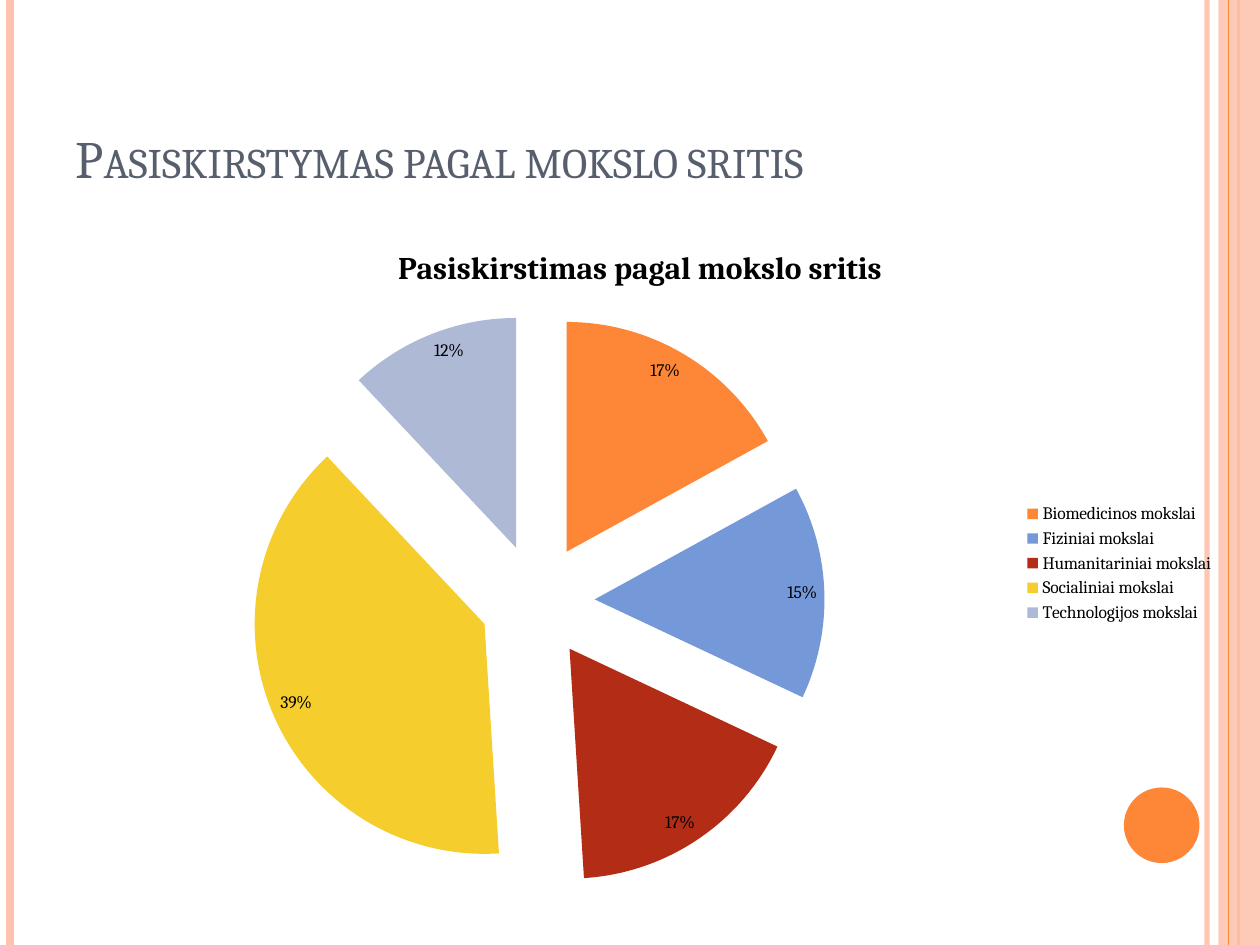
from dataclasses import dataclass

import pptx
import pptx.chart.data
import pptx.dml.color
import pptx.enum.chart
import pptx.enum.shapes
import pptx.enum.text
import pptx.oxml.ns
import pptx.oxml.xmlchemy
import pptx.util
from pptx.util import Inches


@dataclass(frozen=True)
class Theme:
    """Colours, font and type sizes of the deck."""

    font: str = "Cambria"
    heading: str = "575F6D"
    text: str = "000000"
    accent: str = "FE8637"
    pale: str = "FEC3AE"
    paper: str = "FFFFFF"
    slices: tuple = ("FE8637", "7598D9", "B32C16", "F5CD2D", "AEBAD5")
    title_size: int = 30
    chart_title_size: int = 18
    chart_size: int = 10


THEME = Theme()

SCIENCE_AREAS = {
    "Biomedicinos mokslai": 17,
    "Fiziniai mokslai": 15,
    "Humanitariniai mokslai": 17,
    "Socialiniai mokslai": 39,
    "Technologijos mokslai": 12,
}


def rgb(value):
    """Turn a hex string into a colour."""
    return pptx.dml.color.RGBColor.from_string(value)


def make_element(tag, **attributes):
    """Create an XML element with the given attributes."""
    element = pptx.oxml.xmlchemy.OxmlElement(tag)
    for name, value in attributes.items():
        element.set(name, str(value))
    return element


def paint(fill, color, opacity=100):
    """Make a fill solid, with opacity in percent."""
    fill.solid()
    fill.fore_color.rgb = rgb(color)
    if opacity < 100:
        node = next(fill._xPr.iter(pptx.oxml.ns.qn("a:srgbClr")))
        node.append(make_element("a:alpha", val=opacity * 1000))


def format_font(font, size, color, bold=False):
    """Set typeface, size, colour and weight of a font."""
    font.name = THEME.font
    font.size = pptx.util.Pt(size)
    font.color.rgb = rgb(color)
    font.bold = bold


def write_text(frame, text, *, size, color, bold=False, small_caps=False,
               align=pptx.enum.text.PP_ALIGN.LEFT):
    """Write one formatted paragraph into a text frame."""
    para = frame.paragraphs[0]
    para.alignment = align
    span = para.add_run()
    span.text = text
    format_font(span.font, size, color, bold)
    if small_caps:
        span._r.get_or_add_rPr().set("cap", "small")


def add_stripe(page, left, top, height, color, width, opacity=100):
    """Draw a vertical line down from a point."""
    stripe = page.shapes.add_connector(
        pptx.enum.shapes.MSO_CONNECTOR.STRAIGHT, left, top, left, top + height)
    stripe.line.width = pptx.util.Pt(width)
    paint(stripe.line.fill, color, opacity)
    stripe._element.spPr.append(make_element("a:effectLst"))


def add_block(page, kind, left, top, width, height, color, opacity=100):
    """Add a filled shape without outline."""
    block = page.shapes.add_shape(kind, left, top, width, height)
    block.shadow.inherit = False
    block.line.fill.background()
    paint(block.fill, color, opacity)


def add_frame(page, left, top, width, height):
    """Draw the edge stripes, right band and corner disc."""
    right = left + width
    shapes = pptx.enum.shapes.MSO_SHAPE
    band = Inches(0.33)
    disc = Inches(0.6)
    add_stripe(page, right - Inches(0.42), top, height, THEME.pale, 3, 93)
    add_stripe(page, left + Inches(0.08), top, height, THEME.pale, 4.5)
    add_stripe(page, right - Inches(0.17), top, height, THEME.accent, 1.5)
    add_block(page, shapes.RECTANGLE, right - band, top, band, height, THEME.pale, 87)
    add_stripe(page, right - Inches(0.25), top, height, THEME.accent, 0.75)
    add_block(page, shapes.OVAL, right - Inches(1.08), top + height - Inches(1.25),
              disc, disc, THEME.accent)


def add_title(page, text, left, top, width, height):
    """Place the heading in the title placeholder."""
    box = page.shapes.title
    box.left, box.top, box.width, box.height = left, top, width, height
    frame = box.text_frame
    frame.word_wrap = True
    frame.auto_size = pptx.enum.text.MSO_AUTO_SIZE.NONE
    frame.vertical_anchor = pptx.enum.text.MSO_ANCHOR.BOTTOM
    write_text(frame, text, size=THEME.title_size, color=THEME.heading, small_caps=True)


def add_pie(page, title, values, left, top, width, height):
    """Add the exploded pie chart with percent labels and a legend."""
    enums = pptx.enum.chart
    data = pptx.chart.data.CategoryChartData()
    data.categories = list(values)
    data.add_series("Series 1", list(values.values()))
    chart = page.shapes.add_chart(
        enums.XL_CHART_TYPE.PIE, left, top, width, height, data).chart
    format_font(chart.font, THEME.chart_size, THEME.text)

    chart.has_title = True
    write_text(chart.chart_title.text_frame, title, size=THEME.chart_title_size,
               color=THEME.text, bold=True, align=pptx.enum.text.PP_ALIGN.CENTER)
    chart.has_legend = True
    chart.legend.position = enums.XL_LEGEND_POSITION.RIGHT
    chart.legend.include_in_layout = False

    plot = chart.plots[0]
    plot.vary_by_categories = True
    plot.has_data_labels = True
    labels = plot.data_labels
    labels.show_value = False
    labels.show_percentage = True
    labels.number_format = "0%"
    labels.number_format_is_linked = False
    labels.position = enums.XL_LABEL_POSITION.INSIDE_END
    format_font(labels.font, THEME.chart_size, THEME.text)

    series = plot.series[0]
    for index, color in enumerate(THEME.slices):
        paint(series.points[index].format.fill, color)
    first_point = series._element.find(pptx.oxml.ns.qn("c:dPt"))
    first_point.addprevious(make_element("c:explosion", val=25))


def main():
    """Build and save the deck."""
    deck = pptx.Presentation()
    deck.slide_width, deck.slide_height = Inches(10), Inches(7.5)
    page = deck.slides.add_slide(deck.slide_layouts.get_by_name("Title Only"))
    paint(page.background.fill, THEME.paper)
    add_frame(page, 0, 0, deck.slide_width, deck.slide_height)
    add_title(page, "Pasiskirstymas pagal mokslo sritis",
              Inches(0.5), Inches(0.3), Inches(8.17), Inches(1.25))
    add_pie(page, "Pasiskirstimas pagal mokslo sritis", SCIENCE_AREAS,
            Inches(0.42), Inches(1.75), Inches(9.32), Inches(5.44))
    deck.save("out.pptx")


if __name__ == "__main__":
    main()
